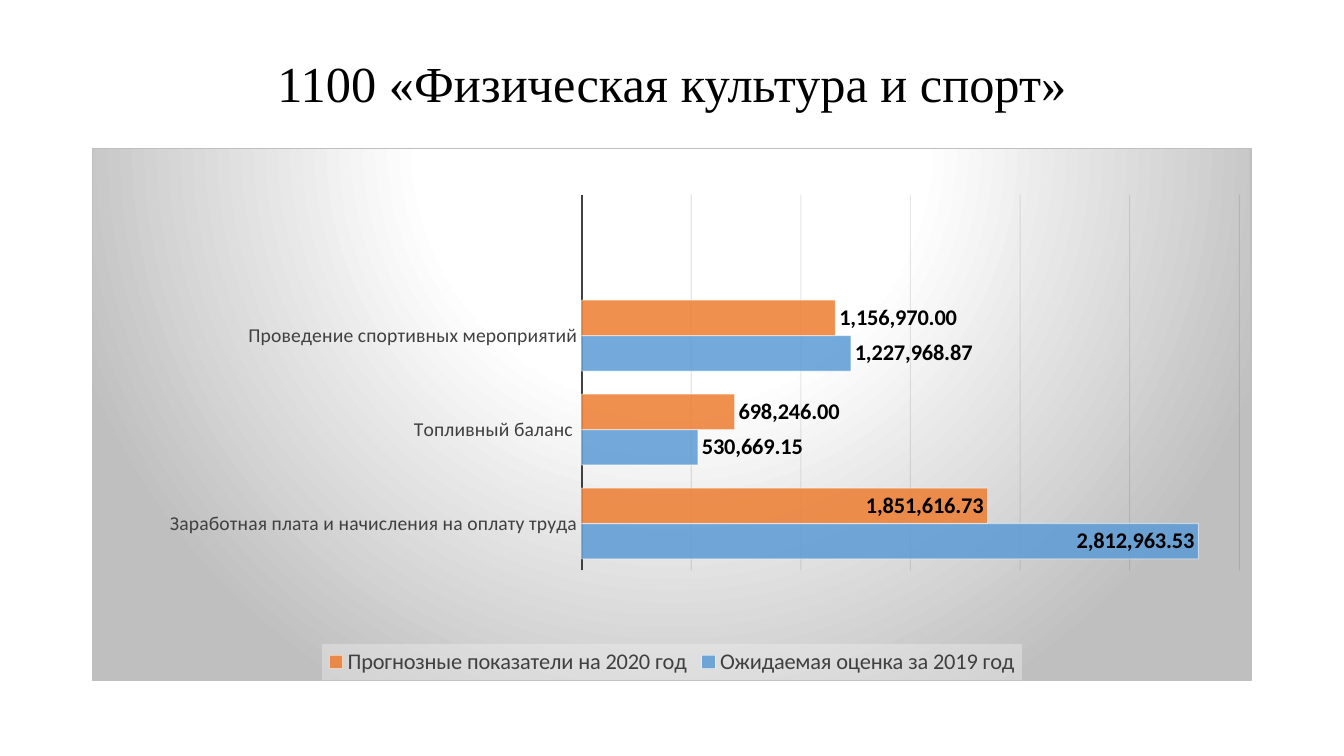
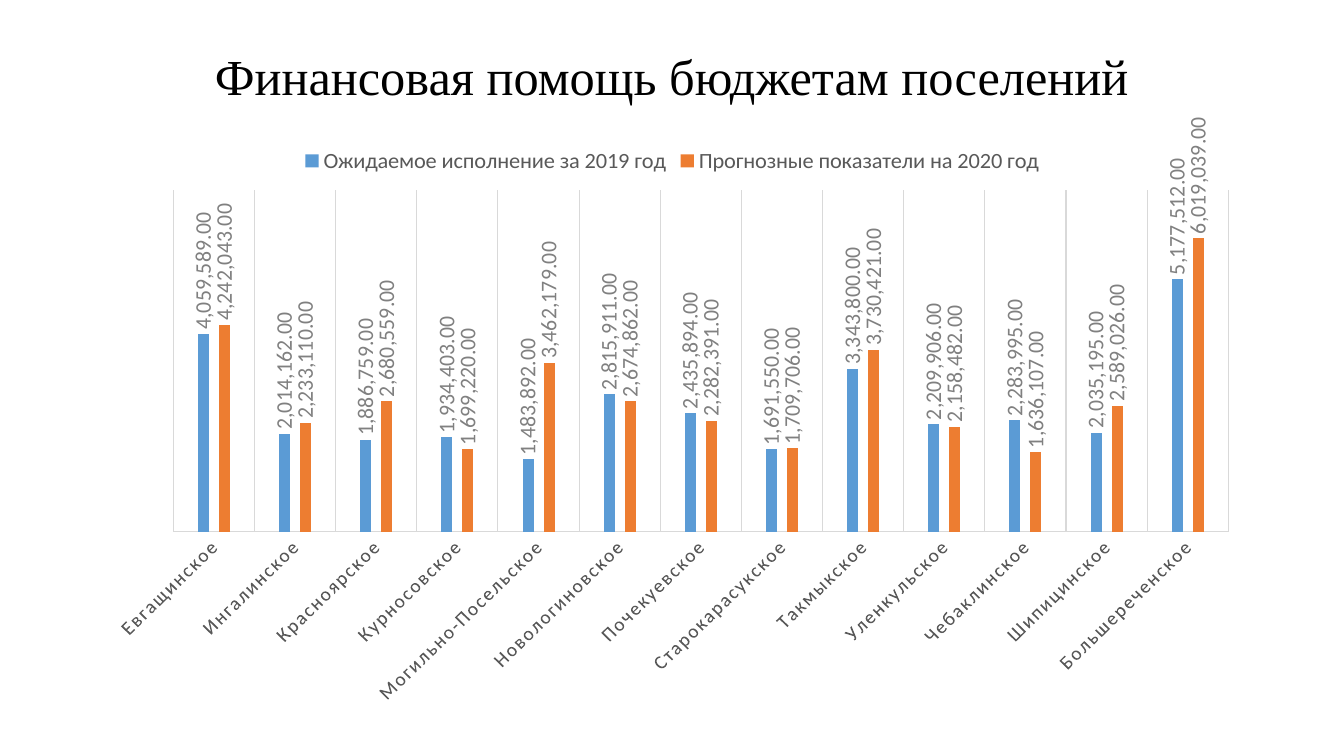
from pptx import Presentation
from pptx.chart.data import CategoryChartData
from pptx.dml.color import RGBColor
from pptx.enum.chart import (XL_CHART_TYPE, XL_LABEL_POSITION,
                             XL_LEGEND_POSITION, XL_TICK_MARK)
from pptx.enum.text import MSO_ANCHOR, PP_ALIGN
from pptx.oxml import parse_xml
from pptx.oxml.ns import nsdecls, qn
from pptx.util import Cm, Pt

BAR, COLUMN = XL_CHART_TYPE.BAR_CLUSTERED, XL_CHART_TYPE.COLUMN_CLUSTERED
INSIDE_END = XL_LABEL_POSITION.INSIDE_END
OUTSIDE_END = XL_LABEL_POSITION.OUTSIDE_END
TOP, BOTTOM = XL_LEGEND_POSITION.TOP, XL_LEGEND_POSITION.BOTTOM
NO_TICK = XL_TICK_MARK.NONE
CENTER, MIDDLE = PP_ALIGN.CENTER, MSO_ANCHOR.MIDDLE

BLUE, ORANGE = "5B9BD5", "ED7D31"
NUMBER_FORMAT = "#,##0.00"
LEFT, WIDTH = Cm(2.33), Cm(29.21)
TITLE_TOP = Cm(1.01)

SLIDES = [
    dict(
        title="1100 «Физическая культура и спорт»", title_height=2.34,
        kind=BAR, top=3.73, height=13.42,
        legend=BOTTOM, text_color="404040", axis_line=("404040", 1.5),
        gap=65, overlap=0, maximum=3000000, unit=500000,
        label_color="000000", label_bold=True, label_position=INSIDE_END,
        categories=["Заработная плата и начисления на оплату труда",
                    "Топливный баланс ", "Проведение спортивных мероприятий", ""],
        series={
            "Ожидаемая оценка за 2019 год": [2812963.53, 530669.15, 1227968.87, None],
            "Прогнозные показатели на 2020 год": [1851616.73, 698246, 1156970, None],
        }),
    dict(
        title="Финансовая помощь бюджетам поселений", title_height=1.98,
        kind=COLUMN, top=3, height=15.04,
        legend=TOP, text_color="595959", axis_line=("D9D9D9", 0.75),
        gap=444, overlap=-90, maximum=7000000, unit=1000000,
        label_color="808080", label_bold=False, label_position=OUTSIDE_END,
        categories=["Евгащинское", "Ингалинское", "Красноярское", "Курносовское",
                    "Могильно-Посельское", "Новологиновское", "Почекуевское",
                    "Старокарасукское", "Такмыкское", "Уленкульское",
                    "Чебаклинское", "Шипицинское", "Большереченское"],
        series={
            "Ожидаемое исполнение за 2019 год": [
                4059589, 2014162, 1886759, 1934403, 1483892, 2815911, 2435894,
                1691550, 3343800, 2209906, 2283995, 2035195, 5177512],
            "Прогнозные показатели на 2020 год": [
                4242043, 2233110, 2680559, 1699220, 3462179, 2674862, 2282391,
                1709706, 3730421, 2158482, 1636107, 2589026, 6019039],
        }),
]

BAR_PLOT_LAYOUT = """<c:layout %s><c:manualLayout><c:layoutTarget val="inner"/>
<c:xMode val="edge"/><c:yMode val="edge"/><c:x val="0.422"/><c:y val="0.087"/>
<c:w val="0.568"/><c:h val="0.707"/></c:manualLayout></c:layout>""" % nsdecls("c")

CHART_BACKGROUND = """<c:spPr %s><a:gradFill><a:gsLst>
<a:gs pos="0"><a:srgbClr val="FFFFFF"/></a:gs>
<a:gs pos="39000"><a:srgbClr val="FFFFFF"/></a:gs>
<a:gs pos="100000"><a:srgbClr val="BFBFBF"/></a:gs></a:gsLst>
<a:path path="circle"><a:fillToRect l="50000" t="-80000" r="50000" b="180000"/></a:path>
</a:gradFill><a:ln w="9525"><a:solidFill><a:srgbClr val="BFBFBF"/></a:solidFill></a:ln>
</c:spPr>""" % nsdecls("c", "a")

LEGEND_BACKGROUND = """<c:spPr %s><a:solidFill><a:srgbClr val="F2F2F2">
<a:alpha val="39000"/></a:srgbClr></a:solidFill></c:spPr>""" % nsdecls("c", "a")


def style_font(font, size, color, name="Calibri", bold=False):
    font.size, font.name, font.bold = Pt(size), name, bold
    font.color.rgb = RGBColor.from_string(color)


def set_opacity(element, *percents):
    """Give the colours inside element, in order, these opacities."""
    for color, percent in zip(element.iter(qn("a:srgbClr")), percents):
        color.append(parse_xml('<a:alpha %s val="%d"/>' % (nsdecls("a"), percent * 1000)))


prs = Presentation()
prs.slide_width, prs.slide_height = Cm(33.87), Cm(19.05)

for spec in SLIDES:
    s = prs.slides.add_slide(prs.slide_layouts[5])
    title = s.shapes.title
    title.left, title.top, title.width = LEFT, TITLE_TOP, WIDTH
    title.height = Cm(spec["title_height"])
    tf = title.text_frame
    tf.text = spec["title"]
    tf.vertical_anchor = MIDDLE
    p = tf.paragraphs[0]
    p.alignment, p.line_spacing = CENTER, 0.9
    style_font(p.runs[0].font, 36, "000000", "Times New Roman")

    data = CategoryChartData(number_format=NUMBER_FORMAT)
    data.categories = spec["categories"]
    for name, values in spec["series"].items():
        data.add_series(name, values)
    chart = s.shapes.add_chart(spec["kind"], LEFT, Cm(spec["top"]), WIDTH,
                               Cm(spec["height"]), data).chart
    chart.has_title = False
    style_font(chart.font, 10, "000000")

    chart.has_legend = True
    legend = chart.legend
    legend.position, legend.include_in_layout = spec["legend"], False
    style_font(legend.font, 16, spec["text_color"])

    cat_axis, val_axis = chart.category_axis, chart.value_axis
    cat_axis.major_tick_mark = cat_axis.minor_tick_mark = NO_TICK
    style_font(cat_axis.tick_labels.font, 14, spec["text_color"])
    line_color, line_width = spec["axis_line"]
    line = cat_axis.format.line
    line.color.rgb, line.width = RGBColor.from_string(line_color), Pt(line_width)
    val_axis.visible = False
    val_axis.minimum_scale, val_axis.maximum_scale = 0, spec["maximum"]
    val_axis.major_unit = spec["unit"]

    is_bar = spec["kind"] == BAR
    val_axis.has_major_gridlines = is_bar
    cat_axis.has_major_gridlines = not is_bar
    grid_axis, grid_color = (val_axis, "0D0D0D") if is_bar else (cat_axis, "D9D9D9")
    line = grid_axis.major_gridlines.format.line
    line.color.rgb, line.width = RGBColor.from_string(grid_color), Pt(0.75)

    plot = chart.plots[0]
    plot.gap_width, plot.overlap = spec["gap"], spec["overlap"]
    plot.vary_by_categories = False
    for ser, color in zip(plot.series, (BLUE, ORANGE)):
        ser.invert_if_negative = False
        ser.format.fill.solid()
        ser.format.fill.fore_color.rgb = RGBColor.from_string(color)
        labels = ser.data_labels
        labels.show_value = True
        labels.number_format, labels.number_format_is_linked = NUMBER_FORMAT, False
        labels.position = spec["label_position"]
        style_font(labels.font, 16, spec["label_color"], bold=spec["label_bold"])
        if is_bar:
            line = ser.format.line
            line.color.rgb, line.width = RGBColor.from_string("FFFFFF"), Pt(0.75)
            set_opacity(ser._element.spPr, 85, 50)
            for short_bar in (1, 2):
                label = ser.points[short_bar].data_label
                style_font(label.font, 16, spec["label_color"], bold=True)
                label.position = OUTSIDE_END
        else:
            labels._element.txPr.bodyPr.set("rot", "-5400000")

    if is_bar:
        plot_area = chart.element.chart.plotArea
        for layout in plot_area.findall(qn("c:layout")):
            plot_area.remove(layout)
        plot_area.insert(0, parse_xml(BAR_PLOT_LAYOUT))
        set_opacity(val_axis._element.find(qn("c:majorGridlines")), 10)
        chart.element.chart.addnext(parse_xml(CHART_BACKGROUND))
        legend._element.find(qn("c:overlay")).addnext(parse_xml(LEGEND_BACKGROUND))
    else:
        axis_text = cat_axis._element.txPr
        axis_text.bodyPr.set("rot", "-2700000")
        for props in axis_text.iter(qn("a:defRPr")):
            props.set("spc", "120")

prs.save("out.pptx")
